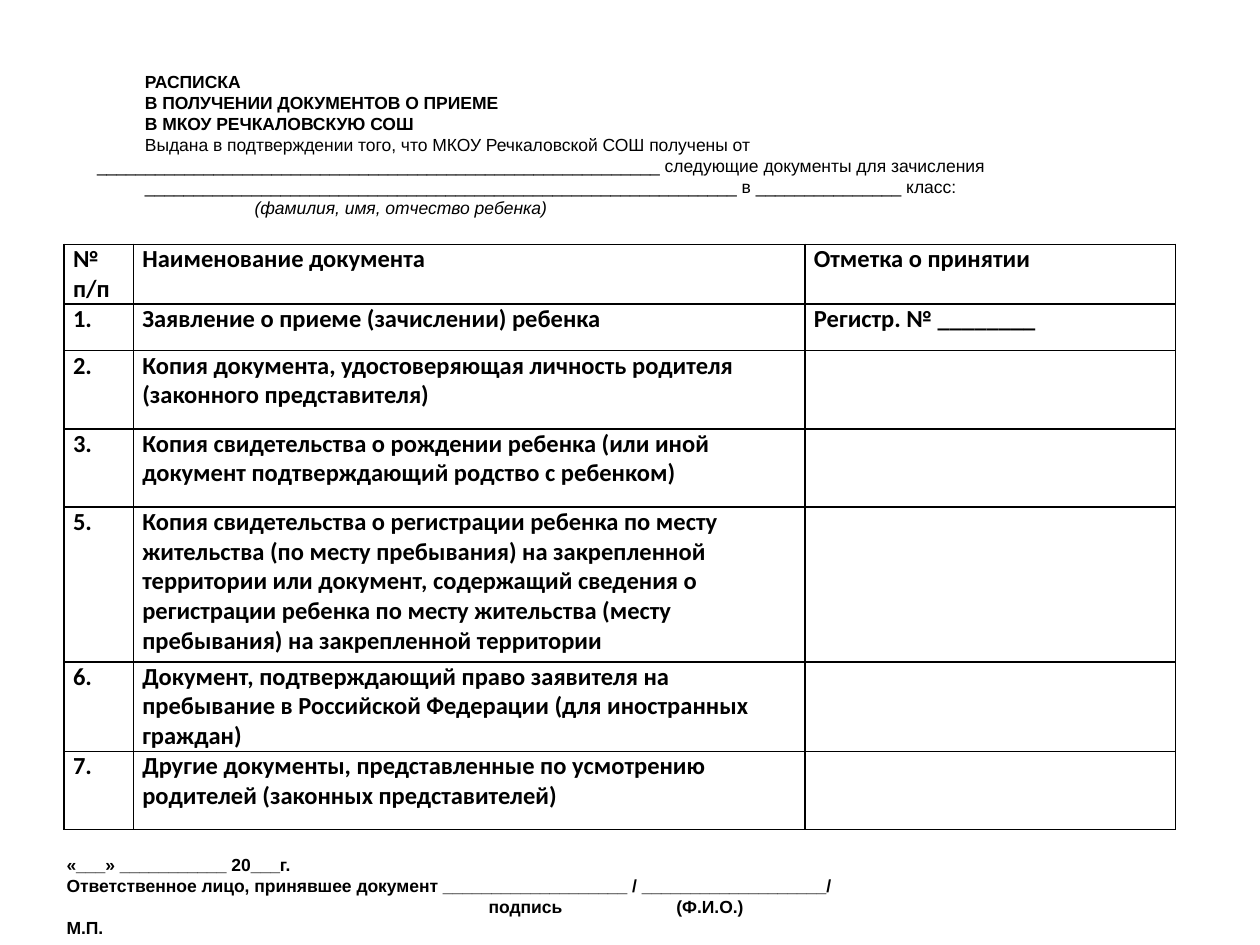
from lxml.etree import SubElement as Sub
from pptx import Presentation
from pptx.dml.color import RGBColor as Rgb
from pptx.enum.text import MSO_ANCHOR as Anchor, MSO_AUTO_SIZE as Auto, PP_ALIGN as Align
from pptx.oxml.ns import qn
from pptx.util import Inches, Pt

HUES = {"ink": "000000"}

deck = Presentation()
deck.slide_width, deck.slide_height = Inches(10), Inches(7.5)
unit = deck.slide_width / 100  # square grid, 100 columns by 75 rows


def grid(*nums):
    return [round(n * unit) for n in nums]


def write(frame, lines, size=10, face="Arial", bold=True, slant=False,
          inset=(1, 0.5), anchor=Anchor.MIDDLE, indent=0, more=False):
    """Put lines into a frame; more=True adds them after the text there."""
    side, edge = grid(*inset)
    frame.margin_left = frame.margin_right = side
    frame.margin_top = frame.margin_bottom = edge
    frame.word_wrap = True
    frame.vertical_anchor = anchor
    for i, line in enumerate(lines):
        par = frame.add_paragraph() if more or i else frame.paragraphs[0]
        par.alignment = Align.LEFT
        if indent:
            par._p.get_or_add_pPr().set("indent", str(grid(indent)[0]))
        run = par.add_run()
        run.text = line
        font = run.font
        font.name, font.size = face, Pt(size)
        font.bold, font.italic = bold, slant
        font.color.rgb = Rgb.from_string(HUES["ink"])


page = deck.slides.add_slide(deck.slide_layouts[5])

# Heading and the lines to fill in
head = page.shapes.title
head.left, head.top, head.width, head.height = grid(6.7, 5.1, 83.3, 12.8)
text = head.text_frame
text.auto_size = Auto.NONE
write(text, ["РАСПИСКА", "В ПОЛУЧЕНИИ ДОКУМЕНТОВ О ПРИЕМЕ",
             "В МКОУ РЕЧКАЛОВСКУЮ СОШ"], indent=3.8)
write(text, ["Выдана в подтверждении того, что МКОУ Речкаловской СОШ получены от "
             + "_" * 58 + " следующие документы для зачисления",
             "_" * 61 + " в " + "_" * 15 + " класс:"],
      bold=False, indent=3.8, more=True)
write(text, ["(фамилия, имя, отчество ребенка)"],
      bold=False, slant=True, indent=12.5, more=True)

# Table of documents
rows = [
    ("№ п/п", "Наименование документа", "Отметка о принятии"),
    ("1.", "Заявление о приеме (зачислении) ребенка", "Регистр. № ________"),
    ("2.", "Копия документа, удостоверяющая личность родителя "
           "(законного представителя)", ""),
    ("3.", "Копия свидетельства о рождении ребенка (или иной документ "
           "подтверждающий родство с ребенком)", ""),
    ("5.", "Копия свидетельства о регистрации ребенка по месту жительства "
           "(по месту пребывания) на закрепленной территории или документ, "
           "содержащий сведения о регистрации ребенка по месту жительства "
           "(месту пребывания) на закрепленной территории", ""),
    ("6.", "Документ, подтверждающий право заявителя на пребывание "
           "в Российской Федерации (для иностранных граждан)", ""),
    ("7.", "Другие документы, представленные по усмотрению родителей "
           "(законных представителей)", ""),
]
wide = grid(5.5, 53.3, 29.4)
tall = grid(3.7, 3.7, 6.2, 6.2, 12.3, 6.2, 6.2)
table = page.shapes.add_table(len(rows), len(wide), *grid(5.1, 19.4),
                              sum(wide), sum(tall)).table
table.first_row = table.horz_banding = False
for col, size in zip(table.columns, wide):
    col.width = size
for row, size, words in zip(table.rows, tall, rows):
    row.height = size
    for cell, word in zip(row.cells, words):
        if word:
            write(cell.text_frame, [word], size=14, face="Calibri")
        cell.margin_left = cell.margin_right = grid(0.7)[0]
        cell.margin_top = cell.margin_bottom = 0
        cell.vertical_anchor = Anchor.TOP
        props = cell._tc.get_or_add_tcPr()
        for side in ("lnL", "lnR", "lnT", "lnB"):
            line = Sub(props, qn("a:" + side), w=str(Pt(1)))
            Sub(Sub(line, qn("a:solidFill")), qn("a:srgbClr"), val=HUES["ink"])
        cell.fill.background()

# Date, signature and stamp
foot = page.shapes.add_textbox(*grid(4.3, 67.3, 91.7, 7.7)).text_frame
write(foot, ["«___» ___________ 20___г.",
             "Ответственное лицо, принявшее документ "
             + "_" * 19 + " / " + "_" * 19 + "/",
             "\tподпись\t(Ф.И.О.)", "М.П."])
tabs = Sub(foot.paragraphs[2]._p.get_or_add_pPr(), qn("a:tabLst"))
for stop in grid(33.5, 48.4):
    Sub(tabs, qn("a:tab"), pos=str(stop), algn="l")

deck.save("out.pptx")
